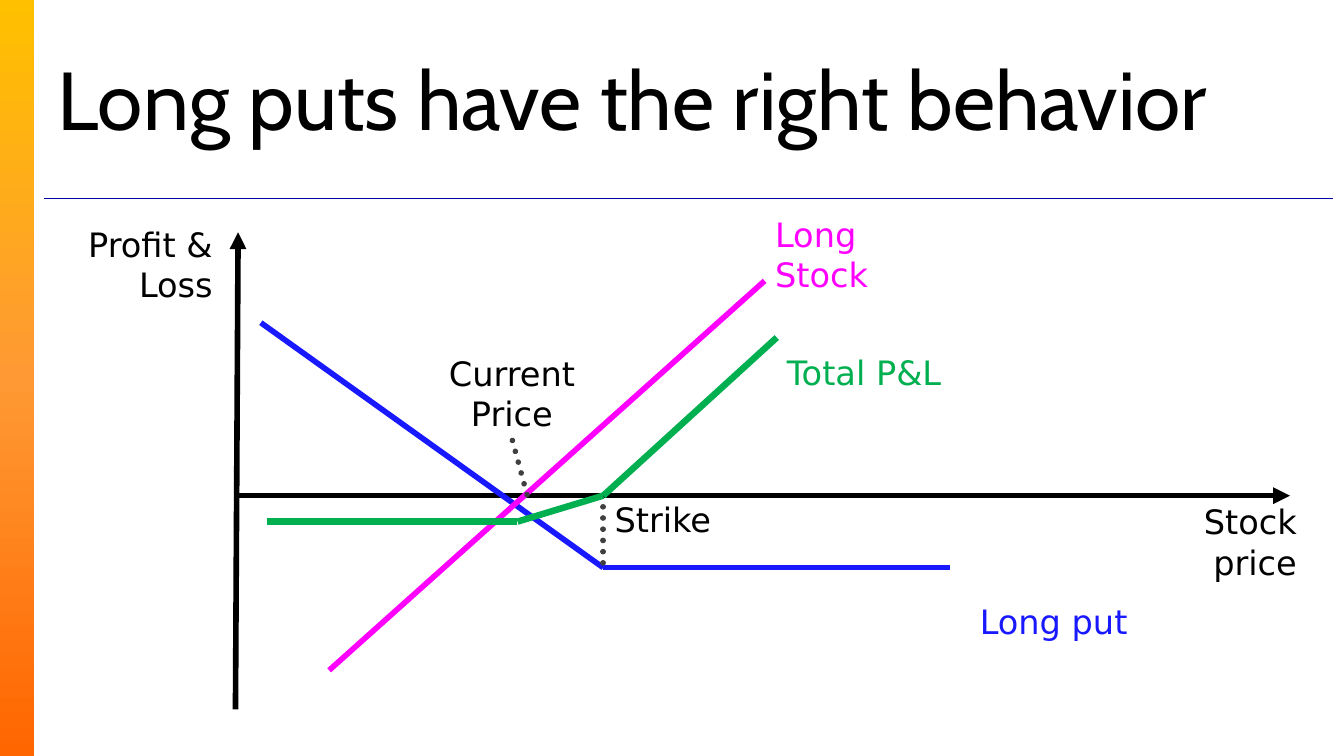
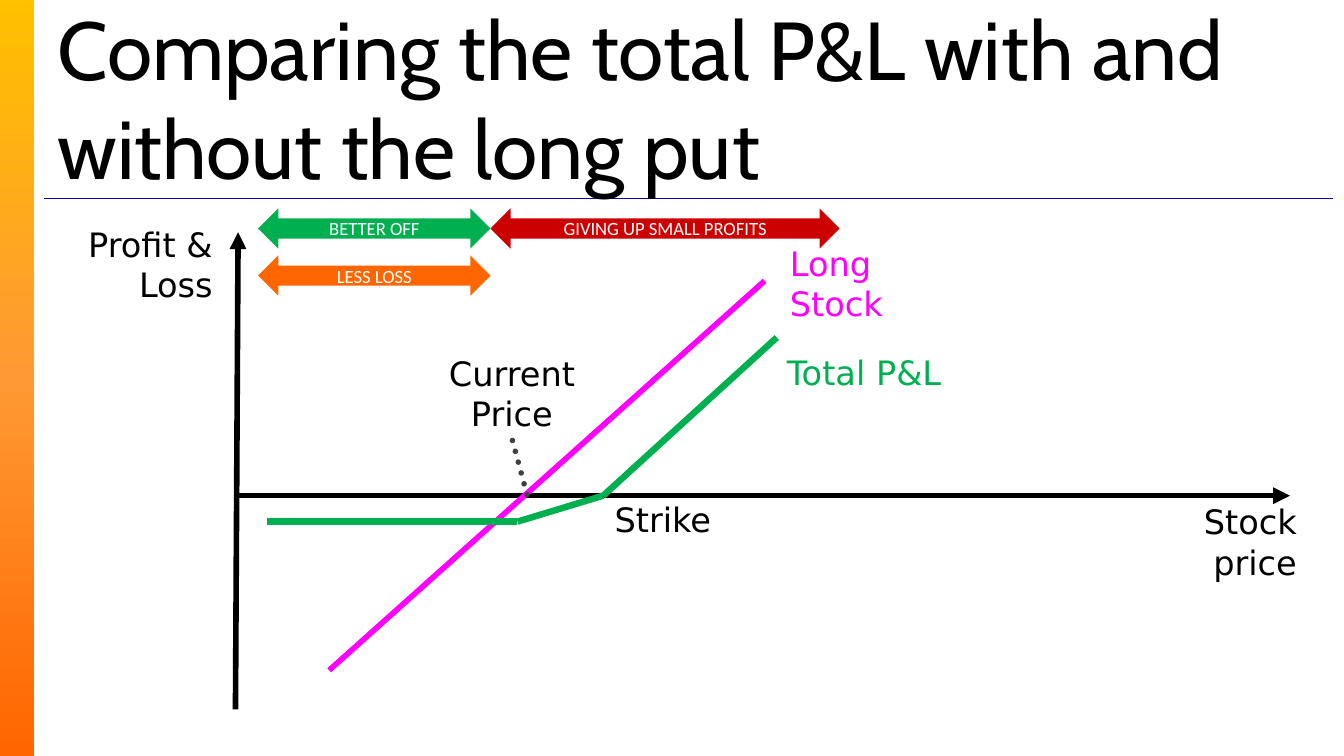
from copy import deepcopy

from lxml import etree
from pptx import Presentation
from pptx.dml.color import RGBColor
from pptx.enum.dml import MSO_LINE
from pptx.enum.shapes import MSO_CONNECTOR, MSO_SHAPE
from pptx.enum.text import MSO_ANCHOR, PP_ALIGN
from pptx.oxml.ns import qn
from pptx.util import Cm, Pt

STRAIGHT = MSO_CONNECTOR.STRAIGHT
RECT, ARROW = MSO_SHAPE.RECTANGLE, MSO_SHAPE.LEFT_RIGHT_ARROW
DOTS = MSO_LINE.ROUND_DOT
MIDDLE, TOP = MSO_ANCHOR.MIDDLE, MSO_ANCHOR.TOP
LEFT, MID, RIGHT = PP_ALIGN.LEFT, PP_ALIGN.CENTER, PP_ALIGN.RIGHT


class Theme:
    black, white, gray = "000000", "FFFFFF", "404040"
    rule, blue, pink = "0000A5", "1919FF", "FF00FF"
    green, red, orange = "00B050", "CC0000", "FF6600"
    band = [(0, "FFC000"), (0.5, "FF9933"), (1, "FF6600")]
    title = ("Cabin", 44)
    label = ("DejaVu Sans", 18)
    note = ("Calibri", 10)


def write(shape, text, style, color, align, anchor=TOP):
    frame = shape.text_frame
    frame.word_wrap = True
    frame.vertical_anchor = anchor
    para = frame.paragraphs[0]
    para.text = text
    para.alignment = align
    para.font.name, size = style
    para.font.size = Pt(size)
    para.font.color.rgb = RGBColor.from_string(color)


def draw(slide, start, end, color, width=3, dots=False, head=False):
    """Draw a straight line between two points given in centimetres."""
    line = slide.shapes.add_connector(
        STRAIGHT, *[Cm(v) for v in (*start, *end)])
    line.line.color.rgb = RGBColor.from_string(color)
    line.line.width = Pt(width)
    props = line._element.spPr
    stroke = props.find(qn("a:ln"))
    if dots:
        line.line.dash_style = DOTS
        stroke.set("cap", "rnd")
    if head:
        etree.SubElement(stroke, qn("a:tailEnd"), type="triangle")
    etree.SubElement(props, qn("a:effectLst"))


deck = Presentation()
deck.slide_width, deck.slide_height = Cm(25.4), Cm(14.29)

# Points of the payoff diagram
base = 9.37
strike = (11.4, base)
kink = (9.78, 9.86)
floor = (11.4, 10.73)

# Labels on both slides: text, left, top, width, colour, alignment
common = [
    ("Stock price", 22.02, 9.35, 2.74, Theme.black, RIGHT),
    ("Strike", 10.95, 9.3, 2.74, Theme.black, RIGHT),
    ("Current Price", 7.87, 6.55, 3.61, Theme.black, MID),
    ("Profit & Loss", 1.3, 4.11, 2.97, Theme.black, RIGHT),
    ("Total P&L", 13.87, 6.53, 4.17, Theme.green, RIGHT),
]
ranges = [
    ("GIVING UP SMALL PROFITS", 9.27, 3.94, 6.6, Theme.red),
    ("BETTER OFF", 4.88, 3.94, 4.39, Theme.green),
    ("LESS LOSS", 4.88, 4.83, 4.39, Theme.orange),
]

# Title, shows the put, place of the stock label, range arrows
pages = [
    ("Long puts have the right behavior", True, (14.4, 3.91), []),
    ("Comparing the total P&L with and without the long put", False,
     (14.68, 4.47), ranges),
]

for title, put, spot, arrows in pages:
    slide = deck.slides.add_slide(deck.slide_layouts[6])

    band = slide.shapes.add_shape(RECT, 0, 0, Cm(0.64), deck.slide_height)
    band.shadow.inherit = False
    band.line.fill.background()
    band.fill.gradient()
    band.fill.gradient_angle = 270
    stops = band._element.spPr.find(".//" + qn("a:gsLst"))
    stops.append(deepcopy(stops[0]))
    for stop, (place, color) in zip(band.fill.gradient_stops, Theme.band):
        stop.position = place
        stop.color.rgb = RGBColor.from_string(color)

    draw(slide, (0.84, 3.75), (25.2, 3.75), Theme.rule, 0.75)
    box = slide.shapes.add_textbox(Cm(0.84), Cm(0.15), Cm(24.33), Cm(3.38))
    write(box, title, Theme.title, Theme.black, LEFT, MIDDLE)

    for text, x, y, wide, color in arrows:
        arrow = slide.shapes.add_shape(ARROW, Cm(x), Cm(y), Cm(wide), Cm(0.76))
        arrow.shadow.inherit = False
        arrow.fill.solid()
        arrow.fill.fore_color.rgb = RGBColor.from_string(color)
        arrow.line.fill.background()
        write(arrow, text, Theme.note, Theme.white, MID, MIDDLE)

    # Axes
    draw(slide, (4.45, 13.41), (4.5, 4.39), Theme.black, head=True)
    draw(slide, (4.5, base), (24.38, base), Theme.black, head=True)

    # Payoffs
    labels = common + [("Long Stock", *spot, 3.81, Theme.pink, LEFT)]
    if put:
        draw(slide, floor, (4.93, 6.1), Theme.blue)
        draw(slide, floor, (17.96, 10.73), Theme.blue)
        labels.append(("Long put", 17.96, 11.23, 3.6, Theme.blue, RIGHT))
    draw(slide, (6.22, 12.67), (14.45, 5.31), Theme.pink)
    draw(slide, (9.96, 9.35), (9.65, 8.2), Theme.gray, dots=True)
    if put:
        draw(slide, (11.4, 10.64), (11.4, 9.47), Theme.gray, dots=True)
    for start, end in [(strike, (14.68, 6.38)), ((5.05, 9.86), kink),
                       (kink, strike)]:
        draw(slide, start, end, Theme.green, 3.5)

    for text, x, y, wide, color, align in labels:
        tall = 1.02 if text in ("Strike", "Total P&L", "Long put") else 1.8
        box = slide.shapes.add_textbox(Cm(x), Cm(y), Cm(wide), Cm(tall))
        write(box, text, Theme.label, color, align)

deck.save("out.pptx")
